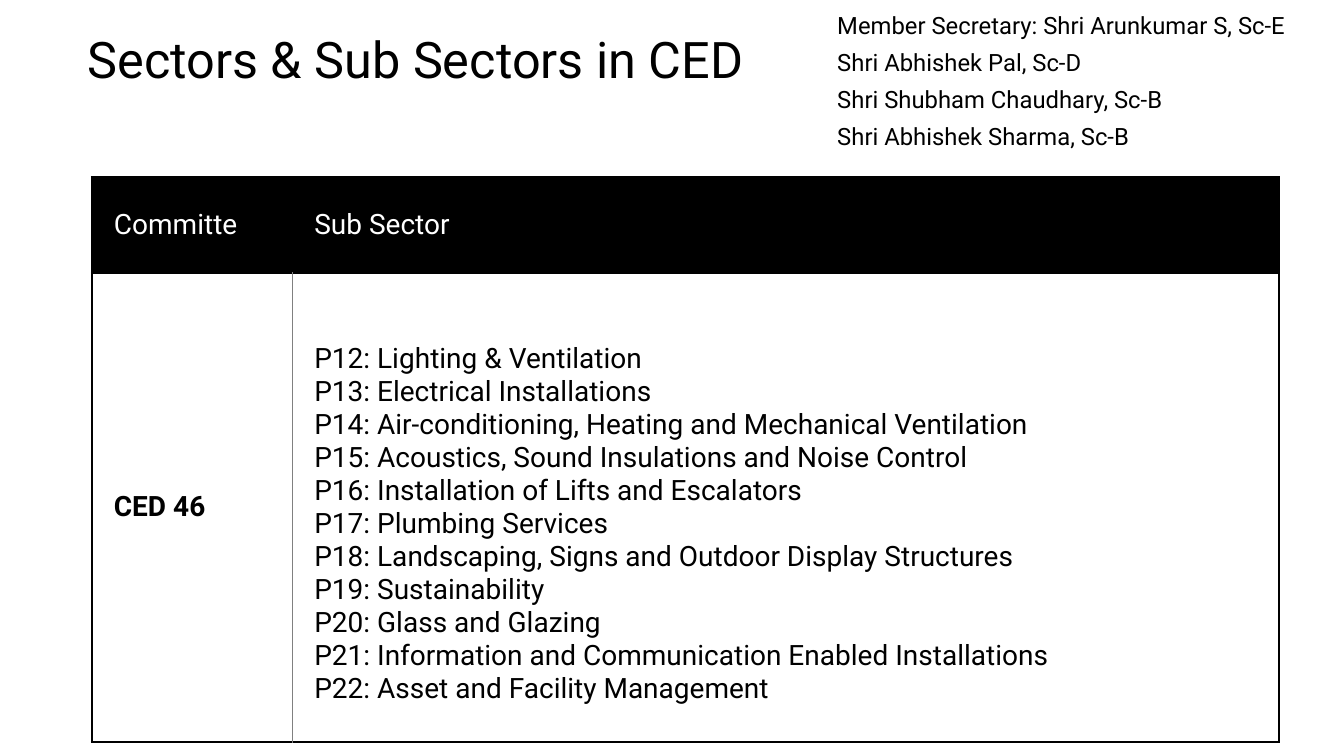
from lxml.etree import SubElement
from pptx import Presentation
from pptx.dml.color import RGBColor
from pptx.enum.text import MSO_ANCHOR as Anchor
from pptx.oxml.ns import qn
from pptx.util import Cm, Pt

BLACK = RGBColor(0x00, 0x00, 0x00)
WHITE = RGBColor(0xFF, 0xFF, 0xFF)
GREY = RGBColor(0x80, 0x80, 0x80)
FONT = "Roboto"

TITLE = "Sectors & Sub Sectors in CED"
MEMBERS = [
    "Member Secretary: Shri Arunkumar S, Sc-E",
    "Shri Abhishek Pal, Sc-D",
    "Shri Shubham Chaudhary, Sc-B",
    "Shri Abhishek Sharma, Sc-B",
]
HEADINGS = ["Committe", "Sub Sector"]
COMMITTEE = "CED 46"
SUB_SECTORS = [
    "P12: Lighting & Ventilation",
    "P13: Electrical Installations",
    "P14: Air-conditioning, Heating and Mechanical Ventilation",
    "P15: Acoustics, Sound Insulations and Noise Control",
    "P16: Installation of Lifts and Escalators",
    "P17: Plumbing Services",
    "P18: Landscaping, Signs and Outdoor Display Structures",
    "P19: Sustainability",
    "P20: Glass and Glazing",
    "P21: Information and Communication Enabled Installations",
    "P22: Asset and Facility Management",
]
OUTER_LINE = (BLACK, 1.5)
INNER_LINE = (GREY, 0.5)


def write_lines(frame, lines, size, color=BLACK, bold=False,
                line_spacing=1.0, space_before=0):
    for index, line in enumerate(lines):
        paragraph = frame.paragraphs[0] if index == 0 else frame.add_paragraph()
        paragraph.line_spacing = line_spacing
        paragraph.space_before = Pt(space_before)
        run = paragraph.add_run()
        run.text = line
        run.font.name = FONT
        run.font.size = Pt(size)
        run.font.bold = bold
        run.font.color.rgb = color


def add_text(slide, box, anchor, lines, size, **spacing):
    frame = slide.shapes.add_textbox(*box).text_frame
    frame.word_wrap = True
    frame.vertical_anchor = anchor
    frame.margin_top = Cm(0.2)
    write_lines(frame, lines, size, **spacing)


def set_borders(cell, **edges):
    """Draw each edge, named L, R, T or B, as a (color, width) line."""
    properties = cell._tc.get_or_add_tcPr()
    for position, edge in enumerate("LRTB"):
        color, width = edges.get(edge, OUTER_LINE)
        line = SubElement(properties, qn(f"a:ln{edge}"), w=str(Pt(width)))
        fill = SubElement(line, qn("a:solidFill"))
        SubElement(fill, qn("a:srgbClr"), val=str(color))
        properties.insert(position, line)


def fill_cell(cell, lines, background, color, bold=False, top=Cm(0.43), **edges):
    cell.fill.solid()
    cell.fill.fore_color.rgb = background
    cell.vertical_anchor = Anchor.MIDDLE
    cell.margin_left, cell.margin_right = Cm(0.56), Cm(0.2)
    cell.margin_top, cell.margin_bottom = top, Cm(0.43)
    write_lines(cell.text_frame, lines, 20, color, bold)
    set_borders(cell, **edges)


def add_sector_table(slide, box):
    width, height = box[2:]
    committee_width, header_height = Cm(5.05), Cm(2.41)
    table = slide.shapes.add_table(2, 2, *box).table
    table.first_row = table.horz_banding = False
    table.columns[0].width = committee_width
    table.columns[1].width = width - committee_width
    table.rows[0].height = header_height
    table.rows[1].height = height - header_height

    for column, heading in enumerate(HEADINGS):
        fill_cell(table.cell(0, column), [heading], BLACK, WHITE)
    fill_cell(table.cell(1, 0), [COMMITTEE], WHITE, BLACK, bold=True, R=INNER_LINE)
    fill_cell(table.cell(1, 1), SUB_SECTORS, WHITE, BLACK, top=Cm(1.26), L=INNER_LINE)


def add_sector_slide(presentation):
    slide = presentation.slides.add_slide(presentation.slide_layouts[6])
    add_text(slide, (Cm(1.96), Cm(0.69), Cm(18.26), Cm(3.23)), Anchor.TOP,
             [TITLE], 36, line_spacing=0.9)
    add_text(slide, (Cm(20.85), Cm(0), Cm(13), Cm(4.11)), Anchor.MIDDLE,
             MEMBERS, 17, line_spacing=0.8, space_before=10)
    add_sector_table(slide, (Cm(2.31), Cm(4.47), Cm(29.92), Cm(14.22)))


def main():
    presentation = Presentation()
    presentation.slide_width, presentation.slide_height = Cm(33.87), Cm(19.05)
    add_sector_slide(presentation)
    presentation.save("out.pptx")


if __name__ == "__main__":
    main()
